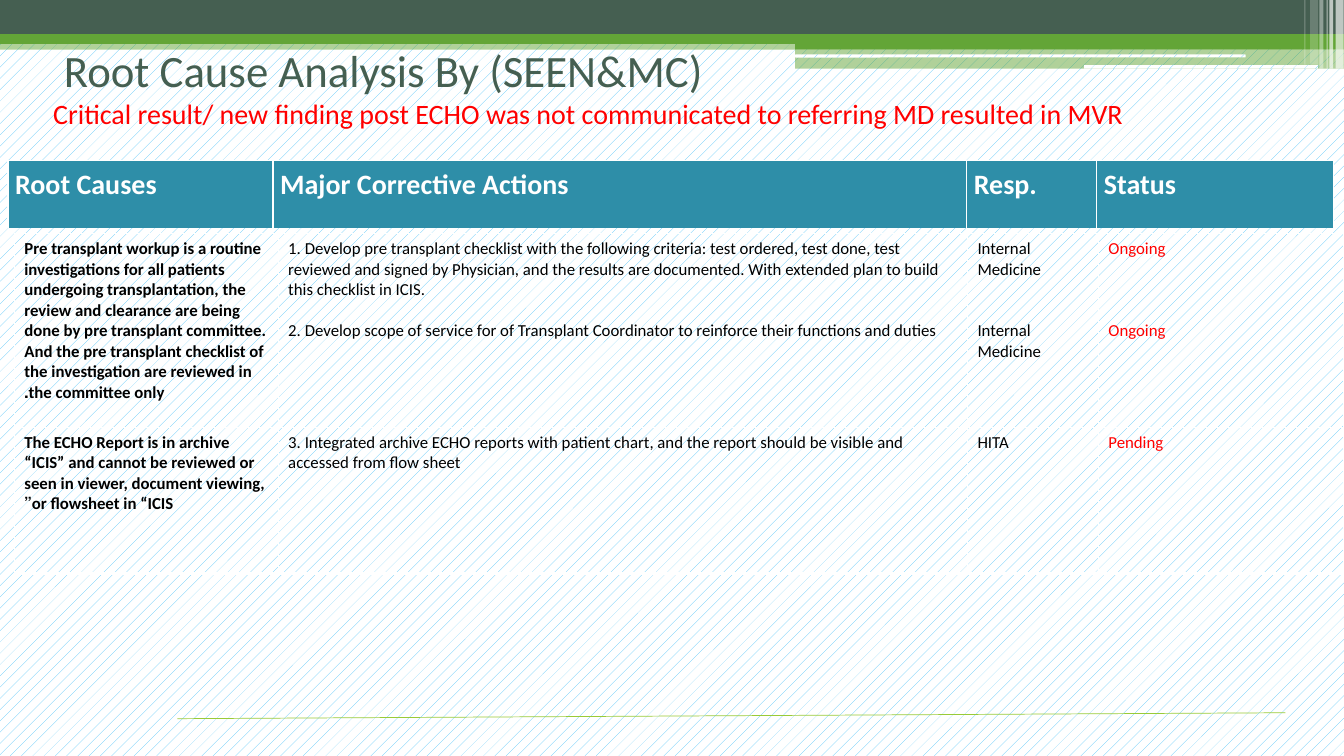
from lxml.etree import SubElement
from pptx import Presentation
from pptx.dml.color import RGBColor
from pptx.enum.dml import MSO_PATTERN
from pptx.enum.shapes import MSO_CONNECTOR, MSO_SHAPE
from pptx.enum.text import PP_ALIGN
from pptx.oxml.ns import qn
from pptx.util import Cm, Pt

COLORS = {
    "dark": "455F51", "green": "63A537", "lime": "99CB38", "sky": "51C3F9",
    "white": "FFFFFF", "teal": "2E8EA8", "red": "FF0000", "black": "000000",
}
SIDES = {"left": "a:lnL", "right": "a:lnR", "top": "a:lnT", "bottom": "a:lnB"}


def color(name):
    return RGBColor.from_string(COLORS[name])


def write(frame, text, size=12, tint="black", bold=False, before=0,
          line=None, rtl=False, indent=0):
    paragraph = frame.paragraphs[0]
    if paragraph.runs:
        paragraph = frame.add_paragraph()
    properties = paragraph._p.get_or_add_pPr()
    if rtl:
        properties.set("rtl", "1")
    if indent:
        properties.set("marL", str(Cm(indent)))
    paragraph.alignment = PP_ALIGN.LEFT
    if before:
        paragraph.space_before = Pt(before)
    if line:
        paragraph.line_spacing = Pt(line)
    run = paragraph.add_run()
    run.text = text
    run.font.name = "Calibri"
    run.font.size = Pt(size)
    run.font.bold = bold
    run.font.color.rgb = color(tint)


class SlideBuilder:
    def __init__(self, slide):
        self.slide = slide
        self.shapes = slide.shapes
        self.pattern(slide.background.fill)

    def pattern(self, fill):
        fill.patterned()
        fill.pattern = MSO_PATTERN.PERCENT_10
        fill.fore_color.rgb = color("sky")
        fill.back_color.rgb = color("white")

    def bar(self, left, top, width, height, tint=None, opacity=100):
        kind = MSO_SHAPE.RECTANGLE if tint else MSO_SHAPE.ROUNDED_RECTANGLE
        shape = self.shapes.add_shape(kind, Cm(left), Cm(top), Cm(width), Cm(height))
        shape.shadow.inherit = False
        shape.line.fill.background()
        if not tint:
            self.pattern(shape.fill)
            return
        shape.fill.solid()
        shape.fill.fore_color.rgb = color(tint)
        if opacity < 100:
            tint_element = shape._element.spPr.find(".//" + qn("a:srgbClr"))
            SubElement(tint_element, qn("a:alpha")).set("val", str(opacity * 1000))

    def line(self, left, top, right, bottom, tint, width):
        connector = self.shapes.add_connector(
            MSO_CONNECTOR.STRAIGHT, Cm(left), Cm(top), Cm(right), Cm(bottom))
        connector.line.color.rgb = color(tint)
        connector.line.width = Pt(width)
        SubElement(connector._element.spPr, qn("a:effectLst"))

    def text_box(self, left, top, width, height):
        frame = self.shapes.add_textbox(
            Cm(left), Cm(top), Cm(width), Cm(height)).text_frame
        frame.word_wrap = True
        return frame

    def table(self, left, top, columns, rows):
        table = self.shapes.add_table(
            len(rows), len(columns), Cm(left), Cm(top),
            Cm(sum(columns)), Cm(sum(rows))).table
        table.first_row = table.horz_banding = False
        for column, width in zip(table.columns, columns):
            column.width = Cm(width)
        for row, height in zip(table.rows, rows):
            row.height = Cm(height)
        for cell in table.iter_cells():
            cell.fill.background()
        return table

    def borders(self, cell, **widths):
        properties = cell._tc.get_or_add_tcPr()
        for position, side in enumerate(SIDES):
            border = properties.makeelement(qn(SIDES[side]), {})
            properties.insert(position, border)
            width = widths.get(side, 0)
            border.set("w", str(Pt(width)))
            if width:
                fill = SubElement(border, qn("a:solidFill"))
                SubElement(fill, qn("a:srgbClr")).set("val", COLORS["white"])
            else:
                SubElement(border, qn("a:noFill"))


def add_banner(builder):
    builder.bar(0, 1.02, 33.87, 0.23, "green", 50)
    builder.bar(0, 0, 33.87, 0.86, "dark")
    builder.bar(0, 0.86, 33.87, 0.25, "green")
    builder.bar(20.04, 0.99, 13.83, 0.25, "green")
    builder.bar(20.04, 1.22, 13.83, 0.51, "green", 50)
    builder.bar(20.04, 1.37, 11.35, 0.08)
    builder.bar(27.31, 1.63, 5.92, 0.1)
    for left, width, height, opacity in (
            (33.66, 0.2, 1.73, 65), (33.5, 0.1, 1.73, 65),
            (33.43, 0.03, 1.73, 60), (33.25, 0.1, 1.73, 40),
            (33.02, 0.2, 1.63, 20), (32.87, 0.03, 1.63, 30)):
        builder.bar(left, 0, width, height, "white", opacity)
    builder.line(4.47, 18.11, 32.39, 17.96, "lime", 0.5)


def add_title(builder):
    frame = builder.text_box(1.09, 0.94, 28.88, 3.91)
    write(frame, "Root Cause Analysis By (SEEN&MC)", size=32, tint="dark", indent=0.27)
    write(frame, "Critical result/ new finding post ECHO was not communicated "
          "to referring MD resulted in MVR", size=20, tint="red")


def add_header(builder):
    table = builder.table(0.2, 4.04, (6.68, 17.48, 3.28, 5.97), (1.7, 0.64))
    headings = ("Root Causes", "Major Corrective Actions", "Resp.", "Status")
    for column, heading in enumerate(headings):
        cell = table.cell(0, column)
        cell.margin_left = cell.margin_right = Cm(0.18)
        cell.margin_top, cell.margin_bottom = Cm(0.62), 0
        cell.fill.solid()
        cell.fill.fore_color.rgb = color("teal")
        builder.borders(cell, left=1, top=1, right=1)
        write(cell.text_frame, heading, size=20, tint="white", bold=True, line=12)
    footer = table.cell(1, 0)
    footer.merge(table.cell(1, 3))
    footer.margin_top = footer.margin_bottom = 0
    builder.borders(footer)


def add_actions(builder):
    rows = (
        (("Pre transplant workup is a routine investigations for all patients "
          "undergoing transplantation, the review and clearance are being done by "
          "pre transplant committee. And the pre transplant checklist of the "
          "investigation are reviewed in the committee only.",),
         ("1. Develop pre transplant checklist with the following criteria: test "
          "ordered, test done, test reviewed and signed by Physician, and the results "
          "are documented. With extended plan to build this checklist in ICIS.",
          "2. Develop scope of service for of Transplant Coordinator to reinforce "
          "their functions and duties"),
         ("Internal Medicine", "Internal Medicine"),
         ("Ongoing", "Ongoing")),
        (("The ECHO Report is in archive “ICIS” and cannot be reviewed or seen in "
          "viewer, document viewing, or flowsheet in “ICIS”",),
         ("3. Integrated archive ECHO reports with patient chart, and the report should "
          "be visible and accessed from flow sheet",),
         ("HITA",),
         ("Pending",)),
    )
    styles = (dict(bold=True, rtl=True), {}, {}, dict(tint="red"))
    gaps = (0, 14.65, 29.3, 43.95)
    table = builder.table(0.36, 5.89, (6.65, 17.37, 3.3, 6.17), (4.88, 3.68))
    for row, (entries, bottom) in enumerate(zip(rows, (1, 3))):
        for column, texts in enumerate(entries):
            cell = table.cell(row, column)
            builder.borders(cell, left=1, top=1, right=1, bottom=bottom)
            for index, text in enumerate(texts):
                write(cell.text_frame, text, before=index * gaps[column], **styles[column])


def main():
    presentation = Presentation()
    presentation.slide_width, presentation.slide_height = Cm(33.87), Cm(19.05)
    builder = SlideBuilder(presentation.slides.add_slide(presentation.slide_layouts[6]))
    add_banner(builder)
    add_title(builder)
    add_header(builder)
    add_actions(builder)
    presentation.save("out.pptx")


if __name__ == "__main__":
    main()
